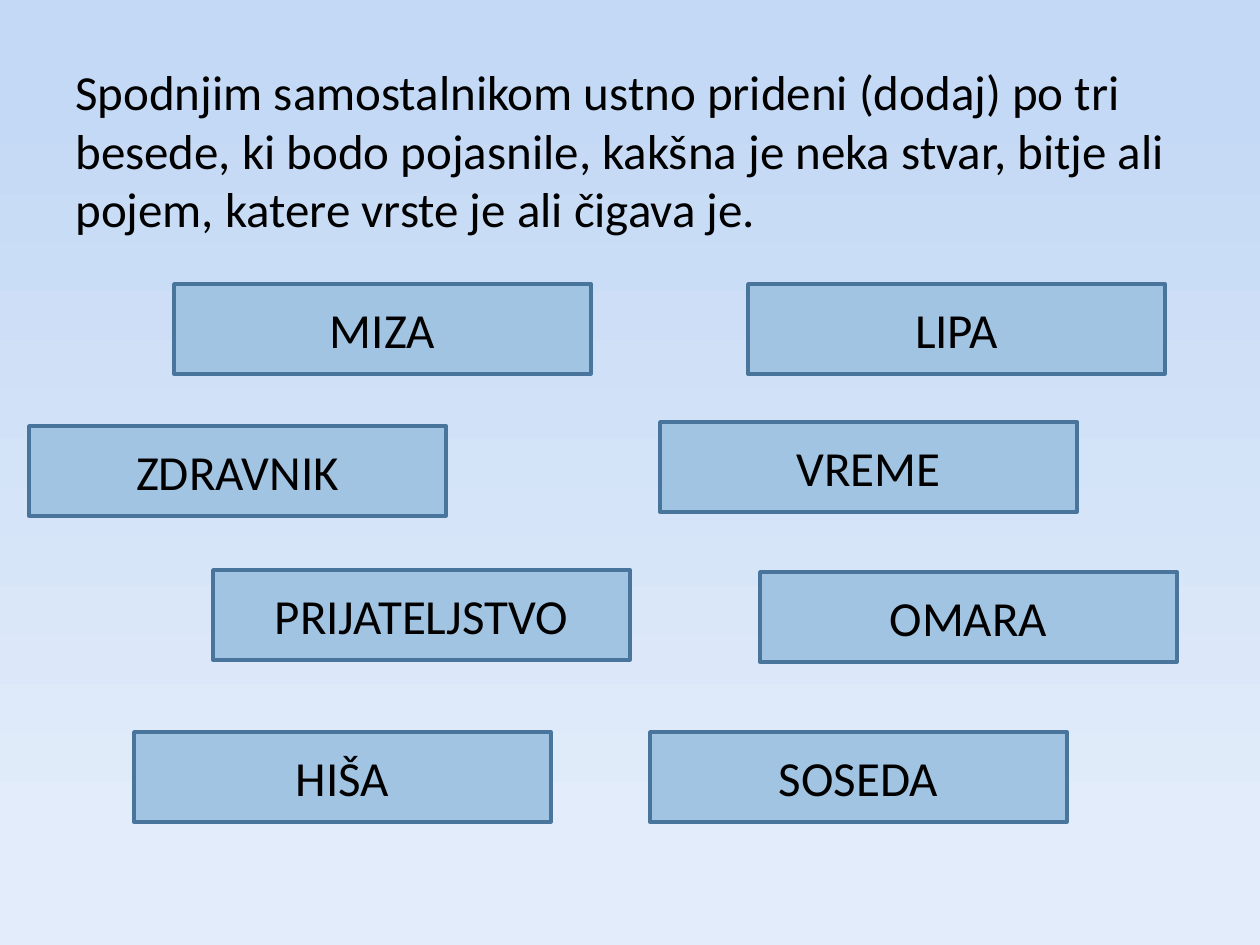
from dataclasses import dataclass

from pptx import Presentation
from pptx import util as u
from pptx.dml.color import RGBColor
from pptx.enum import shapes, text

PX_PER_INCH = 126


@dataclass(frozen=True)
class Theme:
    font: str = "Calibri"
    size: int = 28
    ink: str = "000000"
    card_fill: str = "A1C4E3"
    card_line: str = "49749B"
    line_width: int = 2
    background: tuple = ((0.10, "C4D9F5"), (0.88, "E2ECFA"))


@dataclass(frozen=True)
class Card:
    noun: str
    left: int
    top: int
    width: int = 417
    height: int = 90


THEME = Theme()
INSTRUCTION = (
    "Spodnjim samostalnikom ustno prideni (dodaj) po tri besede, "
    "ki bodo pojasnile, kakšna je neka stvar, bitje ali pojem, "
    "katere vrste je ali čigava je."
)
CARDS = (
    Card("MIZA", 174, 284),
    Card("ZDRAVNIK", 29, 426),
    Card("PRIJATELJSTVO", 213, 570),
    Card("HIŠA", 134, 732),
    Card("LIPA", 748, 284),
    Card("VREME", 660, 422),
    Card("OMARA", 760, 572),
    Card("SOSEDA", 650, 732),
)


def px(n: int) -> u.Emu:
    return u.Emu(round(n * u.Inches(1) / PX_PER_INCH))


def rgb(value: str) -> RGBColor:
    return RGBColor.from_string(value)


def write(tf, content: str, align):
    """Put one styled paragraph into a text frame and return it."""
    tf.word_wrap = True
    tf.text = content
    p = tf.paragraphs[0]
    p.alignment = align
    font = p.runs[0].font
    font.name = THEME.font
    font.size = u.Pt(THEME.size)
    font.color.rgb = rgb(THEME.ink)
    return p


def paint_background(s) -> None:
    fill = s.background.fill
    fill.gradient()
    fill.gradient_angle = 270
    for stop, (position, color) in zip(fill.gradient_stops, THEME.background):
        stop.position = position
        stop.color.rgb = rgb(color)


def add_instruction(s) -> None:
    sp = s.shapes.add_textbox(px(63), px(55), px(1134), px(789))
    p = write(sp.text_frame, INSTRUCTION, text.PP_ALIGN.LEFT)
    p.space_before = u.Pt(THEME.size * 0.2)


def add_card(s, card: Card) -> None:
    sp = s.shapes.add_shape(
        shapes.MSO_SHAPE.RECTANGLE,
        px(card.left), px(card.top), px(card.width), px(card.height),
    )
    sp.shadow.inherit = False
    sp.fill.solid()
    sp.fill.fore_color.rgb = rgb(THEME.card_fill)
    sp.line.color.rgb = rgb(THEME.card_line)
    sp.line.width = u.Pt(THEME.line_width)
    sp.text_frame.vertical_anchor = text.MSO_ANCHOR.MIDDLE
    write(sp.text_frame, card.noun, text.PP_ALIGN.CENTER)


def main() -> None:
    prs = Presentation()
    prs.slide_width, prs.slide_height = px(1260), px(945)
    s = prs.slides.add_slide(prs.slide_layouts[6])
    paint_background(s)
    add_instruction(s)
    for card in CARDS:
        add_card(s, card)
    prs.save("out.pptx")


if __name__ == "__main__":
    main()
